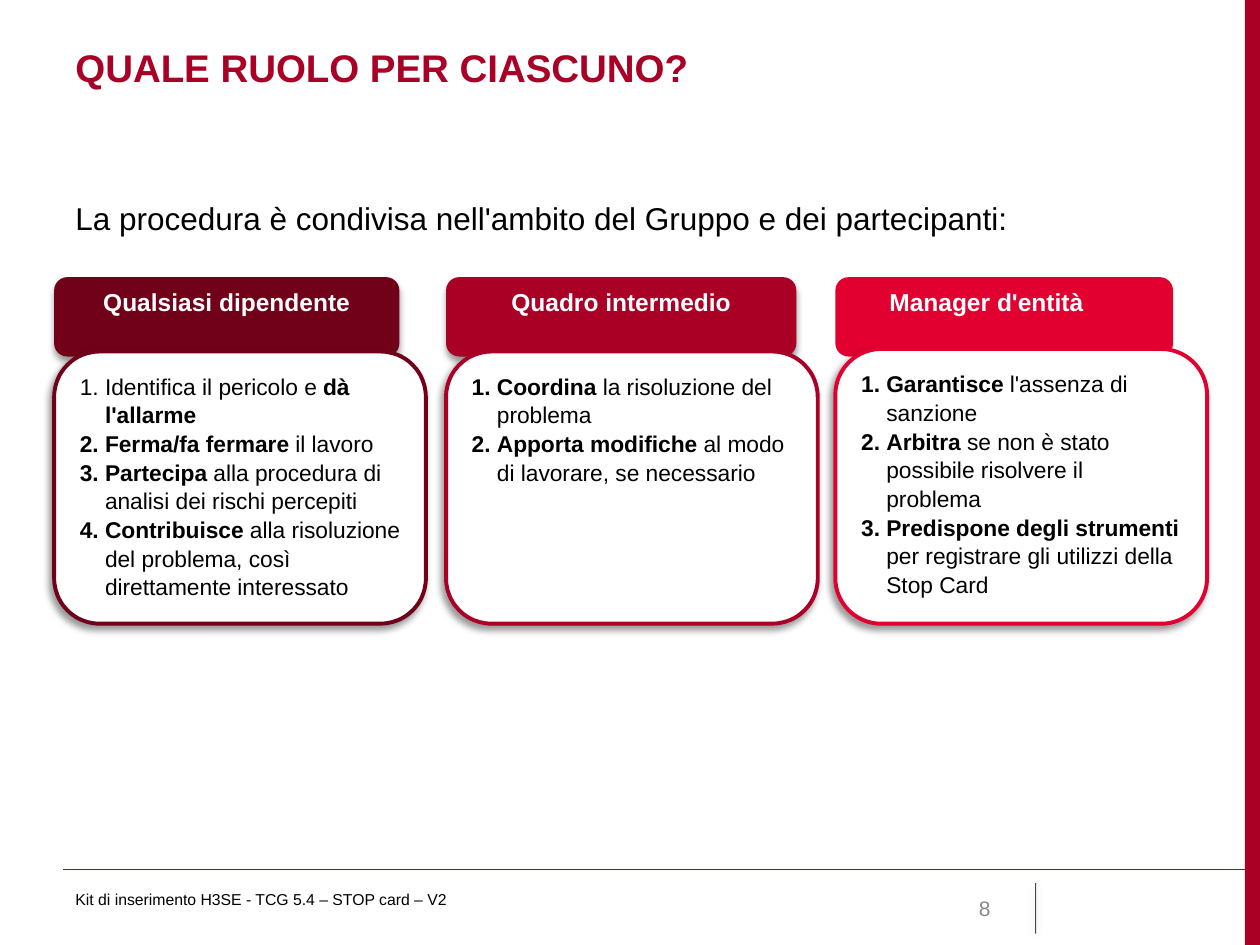
from lxml.etree import SubElement
from pptx import Presentation
from pptx.dml.color import RGBColor
from pptx.enum.shapes import MSO_CONNECTOR, MSO_SHAPE
from pptx.enum.text import MSO_ANCHOR, PP_ALIGN
from pptx.oxml.ns import qn
from pptx.util import Inches, Pt

WIDTH, HEIGHT = 10, 7.5
MARGIN = 0.5
RED, BLACK, WHITE = "AA0025", "000000", "FFFFFF"

# Text boxes: text, (left, top, width, height), font, layout
TEXTS = [
    ("QUALE RUOLO PER CIASCUNO?", (MARGIN, 0.3, 8.99, 0.69),
     dict(size=22, color="A90025", bold=True), {}),
    ("La procedura è condivisa nell'ambito del Gruppo e dei partecipanti:",
     (MARGIN, 1.53, 9.09, 0.4), dict(size=18), {}),
    ("Kit di inserimento H3SE - TCG 5.4 – STOP card – V2",
     (MARGIN, 7.01, 6.08, 0.4), dict(size=9), {}),
    ("8", (7.17, 7.01, 0.79, 0.4), dict(size=12, color="898989"),
     dict(align=PP_ALIGN.RIGHT, anchor=MSO_ANCHOR.MIDDLE)),
]

# Role cards: every item is a list of (text, bold) runs
ROLES = [
    dict(title="Qualsiasi dipendente", color="710019", left=0.43, tab=2.74, top=2.79,
         outline=MSO_SHAPE.FLOWCHART_ALTERNATE_PROCESS, tab_shadow=True, inset=0.1,
         items=[
             [("Identifica il pericolo e ", False), ("dà l'allarme", True)],
             [("Ferma/fa fermare", True), (" il lavoro", False)],
             [("Partecipa", True),
              (" alla procedura di analisi dei rischi percepiti", False)],
             [("Contribuisce", True),
              (" alla risoluzione del problema, così direttamente interessato", False)],
         ]),
    dict(title="Quadro intermedio", color=RED, left=3.54, tab=2.78, top=2.79,
         outline=MSO_SHAPE.ROUNDED_RECTANGLE, tab_shadow=True, inset=0.1,
         items=[
             [("Coordina", True), (" la risoluzione del problema", False)],
             [("Apporta modifiche", True),
              (" al modo di lavorare, se necessario", False)],
         ]),
    dict(title="Manager d'entità", color="E20031", left=6.63, tab=2.68, top=2.77,
         outline=MSO_SHAPE.ROUNDED_RECTANGLE, tab_shadow=False, inset=0.38,
         items=[
             [("Garantisce", True), (" l'assenza di sanzione", False)],
             [("Arbitra", True),
              (" se non è stato possibile risolvere il problema", False)],
             [("Predispone degli strumenti ", True),
              ("per registrare gli utilizzi della Stop Card", False)],
         ]),
]
TAB_TOP, TAB_HEIGHT = 2.2, 0.63
CARD_WIDTH, CARD_BOTTOM = 2.95, 4.95


def rgb(value):
    return RGBColor.from_string(value)


def inches(values):
    return [Inches(value) for value in values]


def style(font, size, color=BLACK, bold=False):
    values = dict(name="Arial", size=Pt(size), bold=bold)
    for name, value in values.items():
        setattr(font, name, value)
    font.color.rgb = rgb(color)


def add_shadow(shape, alpha, blur, distance, angle):
    properties = shape.element.spPr
    for old in properties.findall(qn("a:effectLst")):
        properties.remove(old)
    effects = SubElement(properties, qn("a:effectLst"))
    outer = SubElement(effects, qn("a:outerShdw"), blurRad=str(Pt(blur)),
                       dist=str(Pt(distance)), dir=str(angle * 60000),
                       algn="ctr", rotWithShape="0")
    color = SubElement(outer, qn("a:srgbClr"), val=BLACK)
    SubElement(color, qn("a:alpha"), val=str(alpha * 1000))


def add_block(shapes, outline, place, fill, line=None):
    block = shapes.add_shape(outline, *inches(place))
    block.shadow.inherit = False
    block.fill.solid()
    block.fill.fore_color.rgb = rgb(fill)
    if line:
        block.line.color.rgb = rgb(line)
        block.line.width = Pt(2.25)
    else:
        block.line.fill.background()
    block.text_frame.word_wrap = True
    block.text_frame.vertical_anchor = MSO_ANCHOR.TOP
    return block


def add_rule(shapes, start, end, color, width):
    rule = shapes.add_connector(MSO_CONNECTOR.STRAIGHT, *inches(start + end))
    rule.line.color.rgb = rgb(color)
    rule.line.width = Pt(width)
    SubElement(rule.element.spPr, qn("a:effectLst"))
    return rule


def add_text(shapes, text, place, font, align=PP_ALIGN.LEFT, anchor=MSO_ANCHOR.TOP):
    box = shapes.add_textbox(*inches(place))
    box.text_frame.word_wrap = True
    box.text_frame.vertical_anchor = anchor
    para = box.text_frame.paragraphs[0]
    para.alignment = align
    span = para.add_run()
    span.text = text
    style(span.font, **font)


def add_role(page, role):
    group = page.shapes.add_group_shape()
    color, left, top = role["color"], role["left"], role["top"]

    # Coloured tab
    tab = add_block(group.shapes, role["outline"],
                    (left, TAB_TOP, role["tab"], TAB_HEIGHT), color)
    if role["tab_shadow"]:
        add_shadow(tab, 40, 4, 3, 90)
    tab.text_frame.margin_right = Inches(role["inset"])
    para = tab.text_frame.paragraphs[0]
    para.alignment = PP_ALIGN.CENTER
    span = para.add_run()
    span.text = role["title"]
    style(span.font, 14, WHITE, True)

    # Card with the numbered tasks
    card = add_block(group.shapes, MSO_SHAPE.ROUNDED_RECTANGLE,
                     (left, top, CARD_WIDTH, CARD_BOTTOM - top), WHITE, color)
    add_shadow(card, 40, 4, 3, 135)
    frame = card.text_frame
    for index, item in enumerate(role["items"]):
        para = frame.add_paragraph() if index else frame.paragraphs[0]
        para.alignment = PP_ALIGN.LEFT
        para.line_spacing = 1.05
        properties = para._p.get_or_add_pPr()
        properties.set("marL", str(Inches(0.2)))
        properties.set("indent", str(-Inches(0.2)))
        SubElement(properties, qn("a:buFont"), typeface="+mj-lt")
        SubElement(properties, qn("a:buAutoNum"), type="arabicPeriod")
        for text, bold in item:
            span = para.add_run()
            span.text = text
            style(span.font, 13, BLACK, bold)


def main():
    deck = Presentation()
    deck.slide_width, deck.slide_height = inches((WIDTH, HEIGHT))
    page = deck.slides.add_slide(deck.slide_layouts[6])

    # Side band and footer rules
    add_block(page.shapes, MSO_SHAPE.RECTANGLE, (WIDTH - 0.12, 0, 0.12, HEIGHT), RED)
    add_rule(page.shapes, (MARGIN, 6.9), (WIDTH, 6.9), RED, 0.75)
    divider = add_rule(page.shapes, (8.22, 7.01), (8.22, 7.41), BLACK, 0.5)
    tint = divider.element.spPr.find(".//" + qn("a:srgbClr"))
    SubElement(tint, qn("a:alpha"), val="70000")
    add_shadow(divider, 38, 5, 1.6, 90)

    for text, place, font, layout in TEXTS:
        add_text(page.shapes, text, place, font, **layout)
    for role in ROLES:
        add_role(page, role)
    deck.save("out.pptx")


if __name__ == "__main__":
    main()
